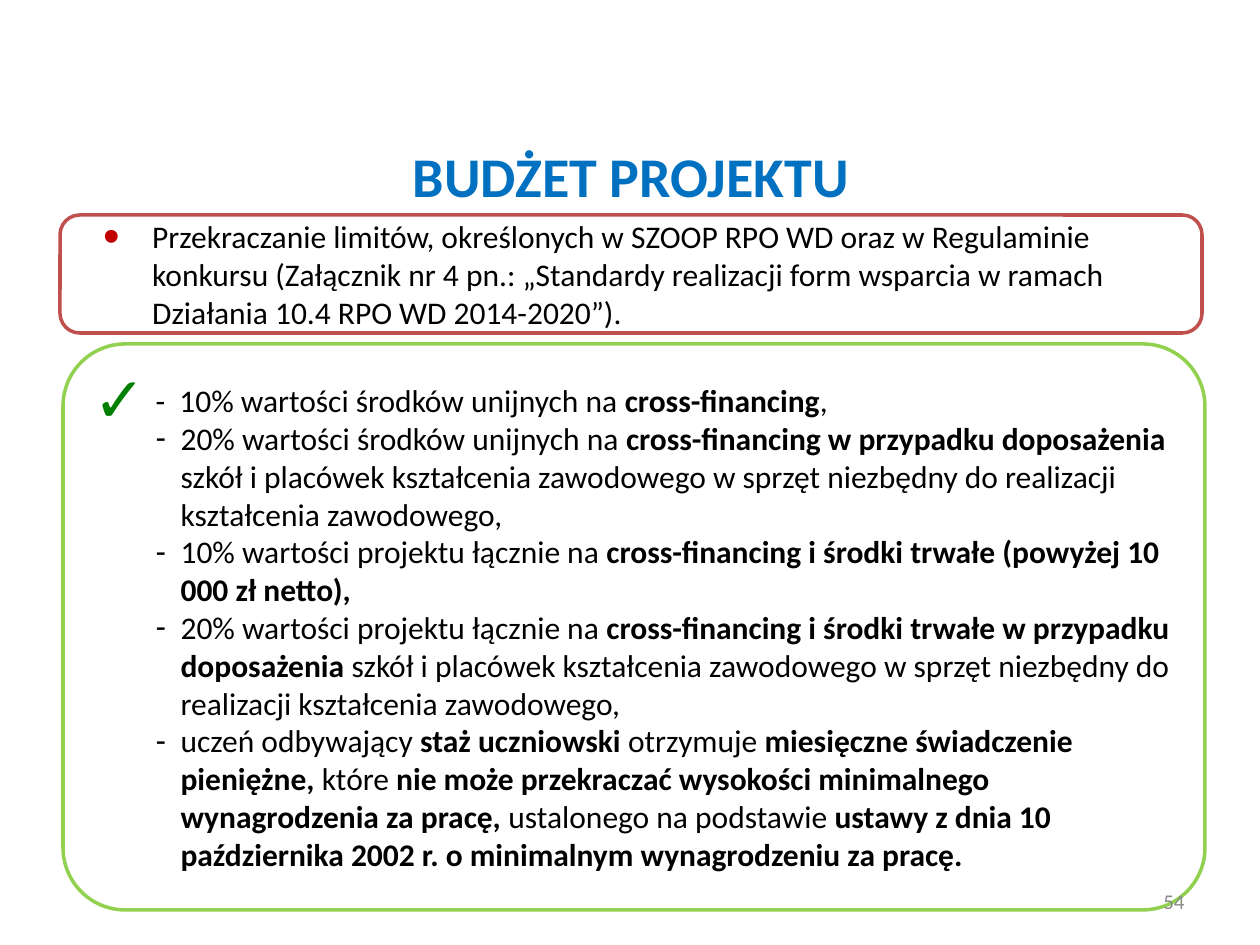
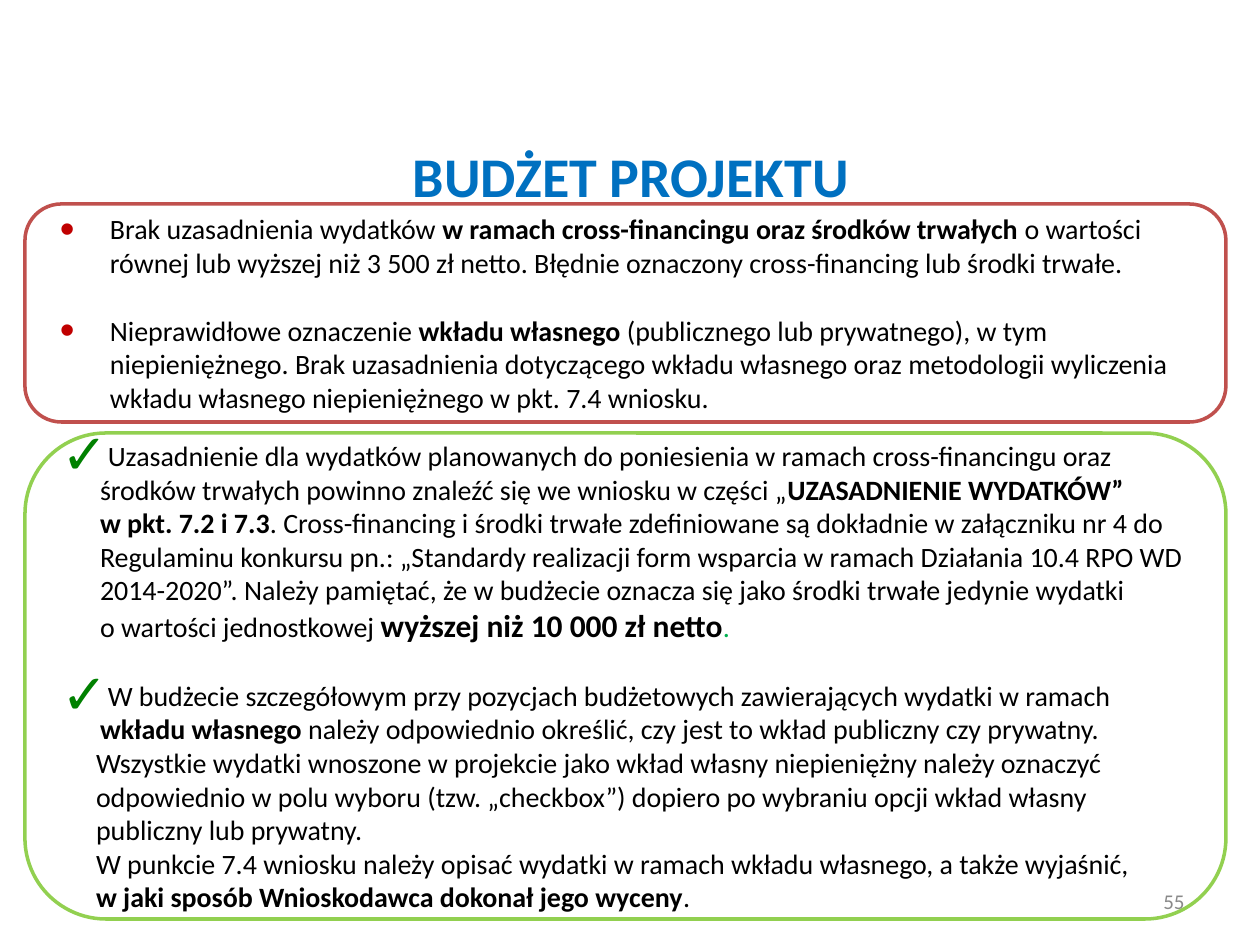
import pptx
import pptx.util
import pptx.dml.color
import pptx.enum.shapes
import pptx.enum.text
from lxml import etree
from pptx.oxml.ns import qn

PX = 914400 // 126
FONT = "Calibri"
BLACK, BLUE, GREY = "000000", "0070C0", "898989"
RED, GREEN, FULL_STOP_GREEN = "C0504D", "92D050", "00B050"
TITLE = "BUDŻET PROJEKTU"
TITLE_AT = (64, 145, 1134, 60)
NUMBER_AT = (903, 876, 294, 50)
BLANK_LINE = 19.5  # points

# Bullet styles: character, colour, size in percent
DOT = ("•", "C00000", 150)
CHECK = ("✓", "008000", 200)
DASH = ("-", BLACK, 100)


def bold(text, **style):
    return (text, dict(style, bold=True))


def para(*runs, bullet=None, left=0, hang=0, before=0):
    """Describe a paragraph: runs, bullet, indents in px, space before in points."""
    return dict(runs=runs, bullet=bullet, left=left, hang=hang, before=before)


def dashed(*runs):
    return para(*runs, bullet=DASH, left=87, hang=25)


SLIDES = [
    dict(number=54, size=18, boxes=[
        dict(at=(60, 215, 1142, 118), line=RED, paras=[
            para("Przekraczanie limitów, określonych w SZOOP RPO WD oraz w Regulaminie konkursu "
                 "(Załącznik nr 4 pn.: „Standardy realizacji form wsparcia w ramach "
                 "Działania 10.4 RPO WD 2014-2020”).", bullet=DOT, left=74, hang=49),
        ]),
        dict(at=(63, 344, 1142, 566), line=GREEN, corner=0.11, paras=[
            para(("- ", dict(spacing=2)), "10% wartości środków unijnych na ",
                 bold("cross-financing"), ",", bullet=CHECK, left=62, hang=62),
            dashed("20% wartości środków unijnych na ",
                   bold("cross-financing w przypadku doposażenia "),
                   "szkół i placówek kształcenia zawodowego w sprzęt niezbędny "
                   "do realizacji kształcenia zawodowego,"),
            dashed("10% wartości projektu łącznie na ",
                   bold("cross-financing i środki trwałe (powyżej 10 000 zł netto),")),
            dashed("20% wartości projektu łącznie na ",
                   bold("cross-financing i środki trwałe w przypadku doposażenia"),
                   " szkół i placówek kształcenia zawodowego w sprzęt niezbędny "
                   "do realizacji kształcenia zawodowego,"),
            dashed("uczeń odbywający ", bold("staż uczniowski "), "otrzymuje",
                   bold(" miesięczne świadczenie pieniężne, "), "które",
                   bold(" nie może przekraczać wysokości minimalnego wynagrodzenia za pracę, "),
                   "ustalonego na podstawie ",
                   bold("ustawy z dnia 10 października 2002 r. "
                        "o minimalnym wynagrodzeniu za pracę.")),
        ]),
    ]),
    dict(number=55, size=16, boxes=[
        dict(at=(25, 204, 1201, 218), line=RED, paras=[
            para("Brak uzasadnienia wydatków ",
                 bold("w ramach cross-financingu oraz środków trwałych "),
                 "o wartości równej lub wyższej niż 3 500 zł netto. "
                 "Błędnie oznaczony cross-financing lub środki trwałe.",
                 bullet=DOT, left=62, hang=50),
            para("Nieprawidłowe oznaczenie ", bold("wkładu własnego"),
                 " (publicznego lub prywatnego), w tym niepieniężnego. Brak uzasadnienia "
                 "dotyczącego wkładu własnego oraz metodologii wyliczenia wkładu własnego "
                 "niepieniężnego w pkt. 7.4 wniosku.",
                 bullet=DOT, left=62, hang=50, before=BLANK_LINE),
        ]),
        dict(at=(25, 433, 1201, 486), line=GREEN, paras=[
            para("Uzasadnienie dla wydatków planowanych do poniesienia w ramach "
                 "cross-financingu oraz środków trwałych powinno znaleźć się we wniosku w części „",
                 bold("UZASADNIENIE WYDATKÓW”\nw pkt. 7.2 i 7.3"),
                 ". Cross-financing i środki trwałe zdefiniowane są dokładnie w załączniku nr 4 "
                 "do Regulaminu konkursu pn.: „Standardy realizacji form wsparcia w ramach "
                 "Działania 10.4 RPO WD 2014-2020”. Należy pamiętać, że w budżecie oznacza się "
                 "jako środki trwałe jedynie wydatki\no wartości jednostkowej ",
                 bold("wyższej niż 10 000 zł netto", size=18),
                 (".", dict(color=FULL_STOP_GREEN)), bullet=CHECK, left=39, hang=39),
            para("W budżecie szczegółowym przy pozycjach budżetowych zawierających "
                 "wydatki w ramach ", bold("wkładu własnego "),
                 "należy odpowiednio określić, czy jest to wkład publiczny czy prywatny.",
                 bullet=CHECK, left=39, hang=39, before=BLANK_LINE),
            para("Wszystkie wydatki wnoszone w projekcie jako wkład własny niepieniężny należy "
                 "oznaczyć odpowiednio w polu wyboru (tzw. „checkbox”) dopiero po wybraniu opcji "
                 "wkład własny publiczny lub prywatny.", left=35),
            para("W punkcie 7.4 wniosku należy opisać wydatki w ramach wkładu własnego, "
                 "a także wyjaśnić,\n",
                 bold("w jaki sposób Wnioskodawca dokonał jego wyceny"), ".", left=35),
        ]),
    ]),
]


def rgb(color):
    return pptx.dml.color.RGBColor.from_string(color)


def place(at):
    return [v * PX for v in at]


def style_run(r, size, color=BLACK, bold=False, spacing=0):
    r.font.name = FONT
    r.font.size = pptx.util.Pt(size)
    r.font.bold = bold
    r.font.color.rgb = rgb(color)
    if spacing:
        r._r.get_or_add_rPr().set("spc", str(spacing * 100))


def add_bullet(p, char, color, percent):
    pPr = p._p.get_or_add_pPr()
    clr = etree.SubElement(pPr, qn("a:buClr"))
    etree.SubElement(clr, qn("a:srgbClr"), val=color)
    etree.SubElement(pPr, qn("a:buSzPct"), val=str(percent * 1000))
    etree.SubElement(pPr, qn("a:buFont"), typeface="Arial")
    etree.SubElement(pPr, qn("a:buChar"), char=char)


def fill_paragraph(p, item, size):
    p.alignment = pptx.enum.text.PP_ALIGN.LEFT
    pPr = p._p.get_or_add_pPr()
    pPr.set("marL", str(item["left"] * PX))
    pPr.set("indent", str(-item["hang"] * PX))
    if item["before"]:
        p.space_before = pptx.util.Pt(item["before"])
    if item["bullet"]:
        add_bullet(p, *item["bullet"])
    for run in item["runs"]:
        text, style = (run, {}) if isinstance(run, str) else run
        for i, part in enumerate(text.split("\n")):
            if i:
                p.add_line_break()
            if part:
                r = p.add_run()
                r.text = part
                style_run(r, **{"size": size, **style})


def add_box(slide, size, at, line, paras, corner=None):
    sp = slide.shapes.add_shape(pptx.enum.shapes.MSO_SHAPE.ROUNDED_RECTANGLE, *place(at))
    sp.shadow.inherit = False
    sp.fill.background()
    sp.line.color.rgb = rgb(line)
    sp.line.width = pptx.util.Pt(2)
    if corner:
        sp.adjustments[0] = corner
    tf = sp.text_frame
    tf.word_wrap = True
    tf.vertical_anchor = pptx.enum.text.MSO_ANCHOR.MIDDLE
    for i, item in enumerate(paras):
        fill_paragraph(tf.add_paragraph() if i else tf.paragraphs[0], item, size)


def add_label(slide, text, at, align, **style):
    tf = slide.shapes.add_textbox(*place(at)).text_frame
    tf.word_wrap = True
    tf.vertical_anchor = pptx.enum.text.MSO_ANCHOR.MIDDLE
    tf.text = text
    p = tf.paragraphs[0]
    p.alignment = align
    style_run(p.runs[0], **style)


def main():
    prs = pptx.Presentation()
    prs.slide_width = pptx.util.Inches(10)
    prs.slide_height = pptx.util.Inches(7.5)
    align = pptx.enum.text.PP_ALIGN
    for content in SLIDES:
        slide = prs.slides.add_slide(prs.slide_layouts[6])
        add_label(slide, TITLE, TITLE_AT, align.CENTER, size=32, color=BLUE, bold=True)
        for box in content["boxes"]:
            add_box(slide, content["size"], **box)
        add_label(slide, str(content["number"]), NUMBER_AT, align.RIGHT, size=12, color=GREY)
    prs.save("out.pptx")


if __name__ == "__main__":
    main()
